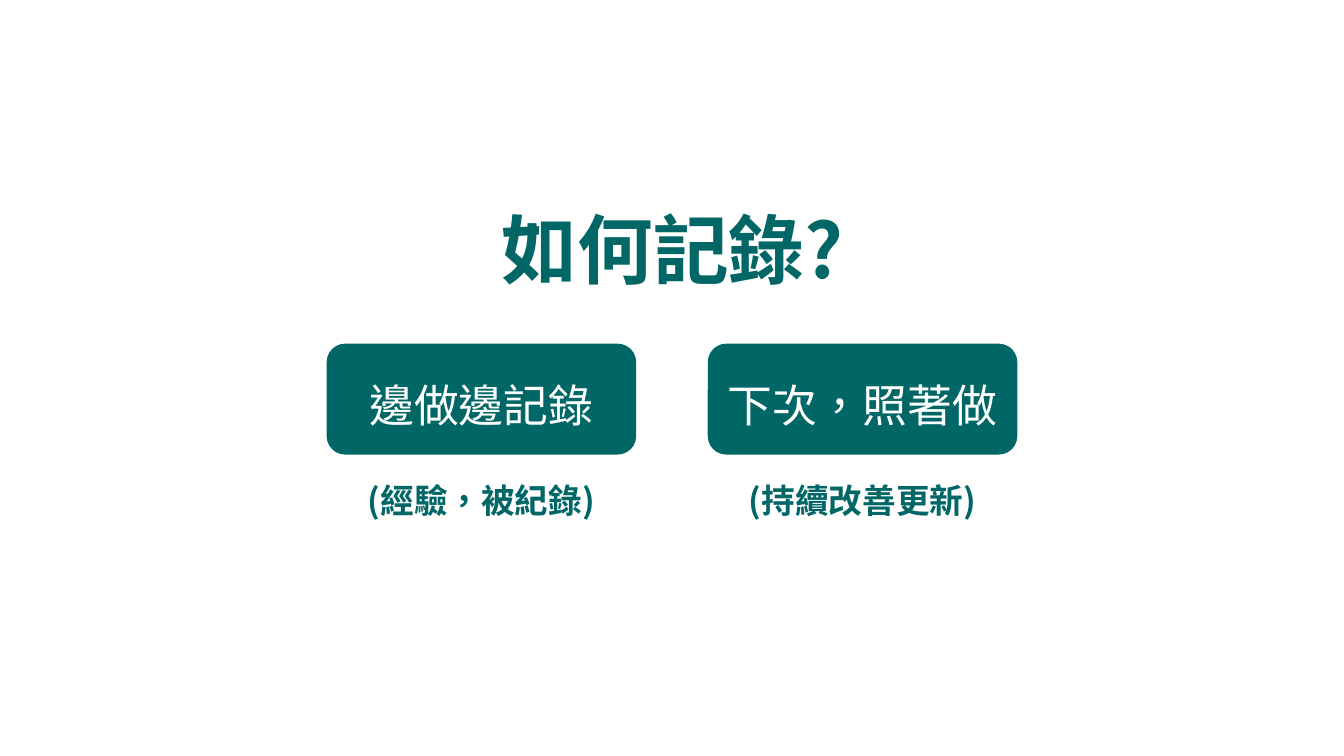
import pptx
import pptx.dml.color
import pptx.enum.shapes
import pptx.enum.text
import pptx.oxml.ns
import pptx.util
from pptx.util import Inches

FONT = "Noto Sans CJK SC"
TEAL = "006666"
WHITE = "FFFFFF"
STEP_LEFT = 3.24
STEP_PITCH = 3.78
STEP_WIDTH = 3.07
CAPTION_WIDTH = 2.46
STEPS = [
    ("邊做邊記錄", "(經驗，被紀錄)"),
    ("下次，照著做", "(持續改善更新)"),
]


def color(hex_string):
    return pptx.dml.color.RGBColor.from_string(hex_string)


def write_text(shape, text, size, hex_color, bold, anchor):
    frame = shape.text_frame
    frame.word_wrap = True
    frame.vertical_anchor = anchor
    paragraph = frame.paragraphs[0]
    paragraph.alignment = pptx.enum.text.PP_ALIGN.CENTER
    paragraph.line_spacing = 1.2
    run = paragraph.add_run()
    run.text = text
    run.font.name = FONT
    run.font.size = pptx.util.Pt(size)
    run.font.bold = bold
    run.font.color.rgb = color(hex_color)
    properties = run.font._element
    properties.set("lang", "zh-TW")
    east_asian = properties.makeelement(pptx.oxml.ns.qn("a:ea"), {"typeface": FONT})
    properties.find(pptx.oxml.ns.qn("a:latin")).addnext(east_asian)


def place_title(slide, text):
    title = slide.shapes.title
    title.left, title.top = Inches(3.54), Inches(1.62)
    title.width, title.height = Inches(6.26), Inches(1.5)
    write_text(title, text, 54, TEAL, True, pptx.enum.text.MSO_ANCHOR.MIDDLE)


def add_step_box(slide, left, text):
    box = slide.shapes.add_shape(
        pptx.enum.shapes.MSO_SHAPE.ROUNDED_RECTANGLE,
        Inches(left), Inches(3.41), Inches(STEP_WIDTH), Inches(1.1),
    )
    box.shadow.inherit = False
    box.fill.solid()
    box.fill.fore_color.rgb = color(TEAL)
    box.line.fill.background()
    write_text(box, text, 32, WHITE, False, pptx.enum.text.MSO_ANCHOR.MIDDLE)


def add_caption(slide, left, text):
    caption = slide.shapes.add_textbox(
        Inches(left), Inches(4.63), Inches(CAPTION_WIDTH), Inches(0.54)
    )
    write_text(caption, text, 24, TEAL, True, pptx.enum.text.MSO_ANCHOR.TOP)


def main():
    presentation = pptx.Presentation()
    presentation.slide_width = Inches(13.33)
    presentation.slide_height = Inches(7.5)
    slide = presentation.slides.add_slide(presentation.slide_layouts[5])
    place_title(slide, "如何記錄?")
    for index, (step, caption) in enumerate(STEPS):
        left = STEP_LEFT + index * STEP_PITCH
        add_step_box(slide, left, step)
        add_caption(slide, left + (STEP_WIDTH - CAPTION_WIDTH) / 2, caption)
    presentation.save("out.pptx")


if __name__ == "__main__":
    main()
